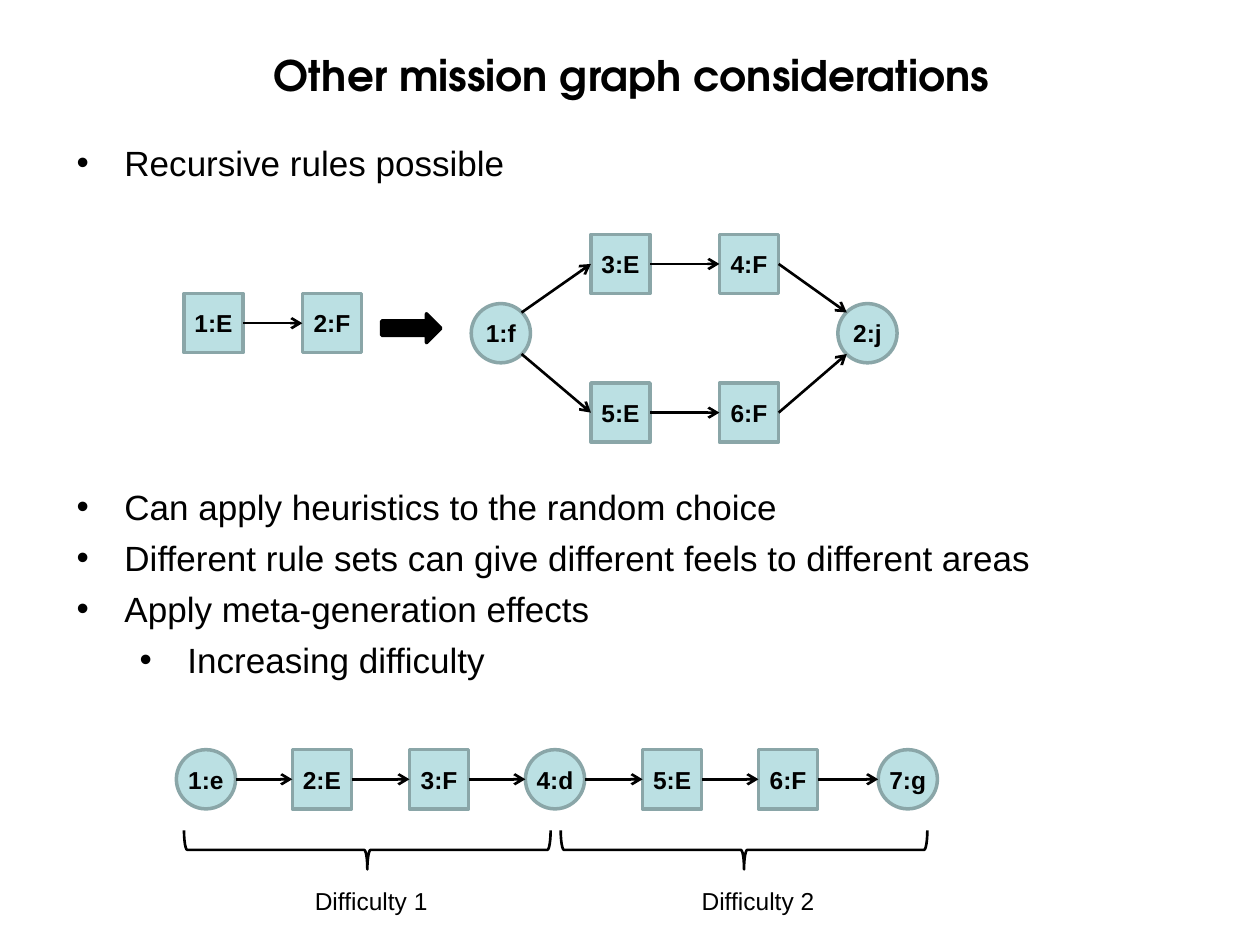
from lxml import etree
from pptx import Presentation
from pptx import util as u
from pptx.dml.color import RGBColor
from pptx.enum import shapes, text
from pptx.oxml.ns import qn

BLACK = "000000"
NODE_SIZE = 0.47
SITES = {
    "left": (0, 0.5), "right": (1, 0.5),
    "upper left": (0.15, 0.15), "upper right": (0.85, 0.15),
    "lower left": (0.15, 0.85), "lower right": (0.85, 0.85),
}


def color(value):
    """Turn a hex string into a colour."""
    return RGBColor.from_string(value)


def write(paragraph, content, size=14, font="Arial", bold=False, align=text.PP_ALIGN.LEFT):
    """Add formatted text to a paragraph."""
    run = paragraph.add_run()
    run.text = content
    run.font.size = u.Pt(size)
    run.font.name = font
    run.font.bold = bold
    run.font.color.rgb = color(BLACK)
    paragraph.alignment = align


def add_outlined(slide, kind, box, line=BLACK, width=2, fill=None):
    """Add a preset shape with an outline and an optional fill."""
    shape = slide.shapes.add_shape(kind, *map(u.Inches, box))
    shape.shadow.inherit = False
    if fill:
        shape.fill.solid()
        shape.fill.fore_color.rgb = color(fill)
    else:
        shape.fill.background()
    shape.line.color.rgb = color(line)
    shape.line.width = u.Pt(width)
    return shape


def add_node(slide, label, left, top):
    """Add a graph node: a square for an upper-case symbol, else a circle."""
    kinds = shapes.MSO_SHAPE
    kind = kinds.RECTANGLE if label[-1].isupper() else kinds.OVAL
    node = add_outlined(slide, kind, (left, top, NODE_SIZE, NODE_SIZE), "8AA6A8", 2, "BBE0E3")
    frame = node.text_frame
    frame.margin_left = frame.margin_right = frame.margin_top = frame.margin_bottom = 0
    frame.vertical_anchor = text.MSO_ANCHOR.MIDDLE
    frame.word_wrap = False
    write(frame.paragraphs[0], label, bold=True, align=text.PP_ALIGN.CENTER)
    return node


def site(node, name):
    """Return the point on a node's edge where an arrow attaches."""
    across, down = SITES[name]
    return node.left + int(node.width * across), node.top + int(node.height * down)


def add_edge(slide, source, target, start="right", end="left"):
    """Add an arrow between two nodes."""
    edge = slide.shapes.add_connector(
        shapes.MSO_CONNECTOR.STRAIGHT, *site(source, start), *site(target, end))
    edge.line.color.rgb = color(BLACK)
    edge.line.width = u.Pt(1.5)
    etree.SubElement(edge.line._get_or_add_ln(), qn("a:tailEnd"), type="arrow")
    etree.SubElement(edge._element.spPr, qn("a:effectLst"))


def add_chain(slide, labels, lefts, top):
    """Add a row of nodes joined by arrows and return the nodes."""
    nodes = [add_node(slide, label, left, top) for label, left in zip(labels, lefts)]
    for source, target in zip(nodes, nodes[1:]):
        add_edge(slide, source, target)
    return nodes


def add_title(slide, box):
    """Place and format the slide title."""
    title = slide.shapes.title
    title.left, title.top, title.width, title.height = map(u.Inches, box)
    title.text_frame.vertical_anchor = text.MSO_ANCHOR.MIDDLE
    write(title.text_frame.paragraphs[0], "Other mission graph considerations",
          size=24, font="TeX Gyre Adventor", bold=True, align=text.PP_ALIGN.CENTER)


def add_bullets(slide, box):
    """Add the bullet list, with room for the rule graph after its first item."""
    frame = slide.shapes.add_textbox(*map(u.Inches, box)).text_frame
    frame.word_wrap = True
    items = [
        ("Recursive rules possible", 0, 5),
        ("Can apply heuristics to the random choice", 0, 173),
        ("Different rule sets can give different feels to different areas", 0, 5),
        ("Apply meta-generation effects", 0, 5),
        ("Increasing difficulty", 1, 5),
    ]
    for index, (content, level, space) in enumerate(items):
        paragraph = frame.add_paragraph() if index else frame.paragraphs[0]
        write(paragraph, content, size=20)
        paragraph.level = level
        paragraph.space_before = u.Pt(space)
        properties = paragraph._p.get_or_add_pPr()
        properties.set("marL", str(u.Inches(0.38 + 0.5 * level)))
        properties.set("indent", str(u.Inches(-0.38)))
        etree.SubElement(properties, qn("a:buFont"), typeface="Arial")
        etree.SubElement(properties, qn("a:buChar"), char="•")


def add_recursive_rule(slide, left, top):
    """Add the rule that rewrites a pair of nodes as a forked graph."""
    add_chain(slide, ["1:E", "2:F"], [left, left + 0.94], top + 0.47)
    add_outlined(slide, shapes.MSO_SHAPE.RIGHT_ARROW,
                 (left + 1.57, top + 0.63, 0.47, 0.23), fill=BLACK)
    fork = add_node(slide, "1:f", left + 2.28, top + 0.55)
    join = add_node(slide, "2:j", left + 5.19, top + 0.55)
    branches = [(["3:E", "4:F"], 0, "upper"), (["5:E", "6:F"], 1.18, "lower")]
    for labels, offset, side in branches:
        first, last = add_chain(slide, labels, [left + 3.23, left + 4.25], top + offset)
        add_edge(slide, fork, first, start=f"{side} right")
        add_edge(slide, last, join, end=f"{side} left")


def add_difficulty(slide, label, left, top, label_left):
    """Add a downward brace with its label."""
    depth, span = 0.31, 2.91
    shift = (span - depth) / 2
    brace = add_outlined(slide, shapes.MSO_SHAPE.RIGHT_BRACE,
                         (left + shift, top - shift, depth, span), width=1.5)
    brace.rotation = 90
    frame = slide.shapes.add_textbox(
        *map(u.Inches, (label_left, top + 0.39, 1.1, 0.34))).text_frame
    frame.word_wrap = False
    frame.auto_size = text.MSO_AUTO_SIZE.SHAPE_TO_FIT_TEXT
    write(frame.paragraphs[0], label)


def add_difficulty_graph(slide, left, top):
    """Add the chain of nodes split into two difficulty stages."""
    labels = ["1:e", "2:E", "3:F", "4:d", "5:E", "6:F", "7:g"]
    offsets = [0, 0.92, 1.85, 2.77, 3.7, 4.62, 5.57]
    add_chain(slide, labels, [left + offset for offset in offsets], top)
    add_difficulty(slide, "Difficulty 1", left + 0.06, top + 0.64, left + 1)
    add_difficulty(slide, "Difficulty 2", left + 3.05, top + 0.64, left + 4.07)


def main():
    """Build and save the slide."""
    presentation = Presentation()
    presentation.slide_width, presentation.slide_height = u.Inches(10), u.Inches(7.5)
    slide = presentation.slides.add_slide(presentation.slide_layouts[5])
    add_title(slide, (0.51, 0.29, 9, 0.61))
    add_recursive_rule(slide, 1.46, 1.86)
    add_bullets(slide, (0.51, 1.07, 9, 4.65))
    add_difficulty_graph(slide, 1.4, 5.95)
    presentation.save("out.pptx")


if __name__ == "__main__":
    main()
